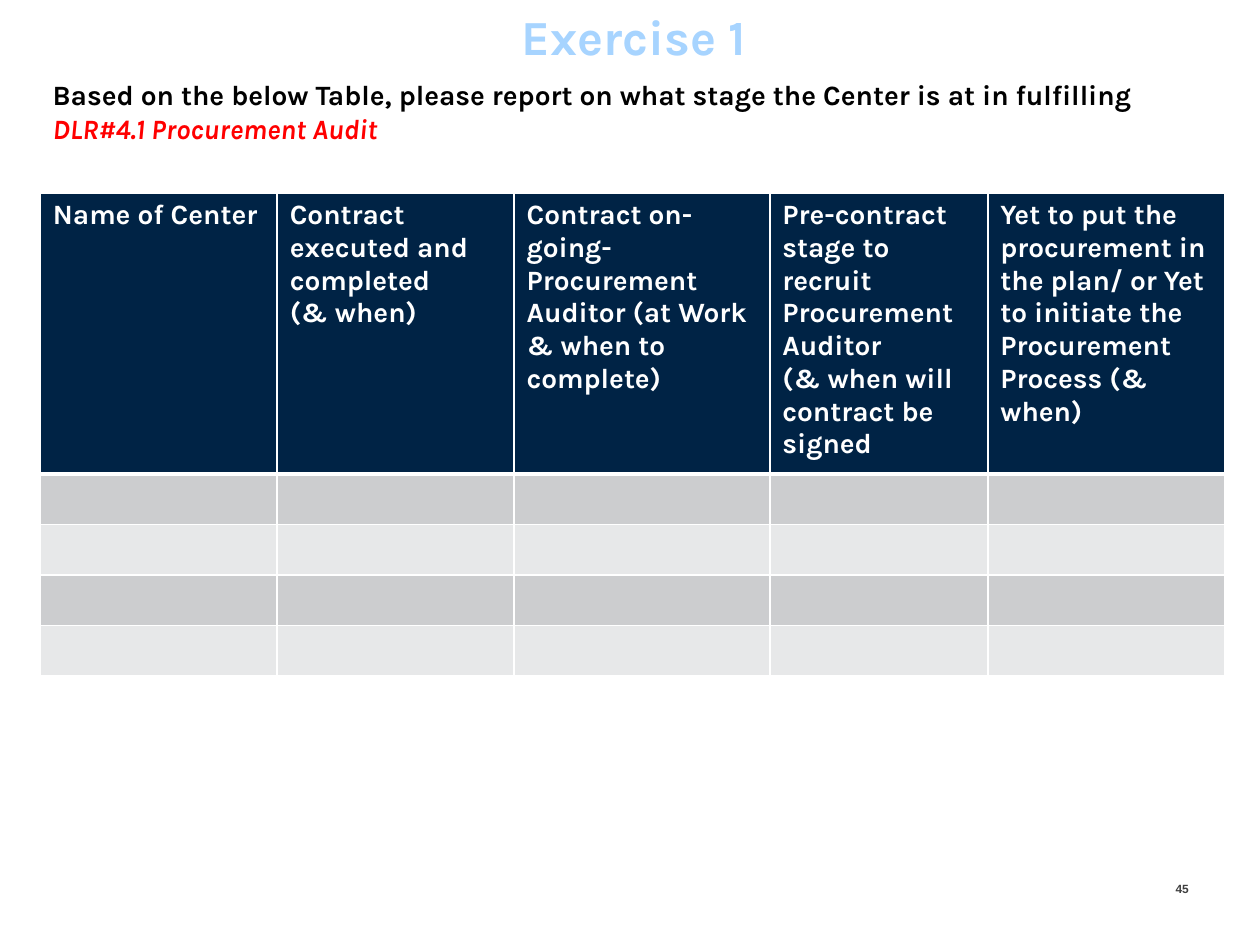
"""Build the Exercise 1 slide with its procurement audit table."""
import lxml.etree
import pptx
import pptx.dml.color
import pptx.enum.text
import pptx.oxml.ns
import pptx.util

Inches = pptx.util.Inches
Pt = pptx.util.Pt

THEME = {
    "font": "Karla", "plain": "Arial",
    "navy": "002345", "sky": "A7D4FF", "black": "000000", "red": "FF0000",
    "white": "FFFFFF", "gray": "404040", "bands": ("CCCDCF", "E7E8E9"),
    "title": 28, "body": 16, "small": 6.8, "thin": 1, "thick": 3,
}
TITLE = [("Exercise 1", "sky", False)]
INTRO = [
    ("Based on the below Table, please report on what stage the Center is at in fulfilling ", "black", False),
    ("DLR#4.1 Procurement Audit", "red", True),
]
NUMBER = [("45", "gray", False)]
HEADS = [
    (1.88, ["Name of Center"]),
    (1.88, ["Contract executed and completed", "(& when)"]),
    (2.03, ["Contract on-going- Procurement Auditor (at Work", "& when to complete)"]),
    (1.73, ["Pre-contract stage to recruit Procurement Auditor", "(& when will contract be signed"]),
    (1.88, ["Yet to put the procurement in the plan/ or Yet to initiate the Procurement Process (& when)"]),
]
ROWS = [2.22] + [0.4] * 4


def tint(name):
    return pptx.dml.color.RGBColor.from_string(name)


def write(para, parts, size, face="font"):
    for text, color, slant in parts:
        run = para.add_run()
        run.text = text
        font = run.font
        font.name, font.size, font.bold = THEME[face], Pt(THEME[size]), True
        if slant:
            font.italic = True
        font.color.rgb = tint(THEME[color])


def label(slide, place, parts, size, face="font", align=None, inset=None):
    box = slide.shapes.add_textbox(*map(Inches, place))
    frame = box.text_frame
    frame.word_wrap = True
    if inset:
        sides = map(Inches, inset)
        frame.margin_left, frame.margin_top, frame.margin_right, frame.margin_bottom = sides
    para = frame.paragraphs[0]
    para.alignment = align
    write(para, parts, size, face)


def border(cell, row):
    props = cell._tc.get_or_add_tcPr()
    name = pptx.oxml.ns.qn
    for side in "LRTB":
        heavy = (row, side) in ((0, "B"), (1, "T"))
        width = Pt(THEME["thick" if heavy else "thin"])
        line = lxml.etree.SubElement(props, name("a:ln" + side), w=str(width))
        fill = lxml.etree.SubElement(line, name("a:solidFill"))
        lxml.etree.SubElement(fill, name("a:srgbClr"), val=THEME["white"])


def grid(slide):
    wide = sum(width for width, _ in HEADS)
    place = (0.32, 1.53, wide, sum(ROWS))
    table = slide.shapes.add_table(len(ROWS), len(HEADS), *map(Inches, place)).table
    for row, tall in enumerate(ROWS):
        table.rows[row].height = Inches(tall)
        for col, (width, lines) in enumerate(HEADS):
            table.columns[col].width = Inches(width)
            cell = table.cell(row, col)
            border(cell, row)
            cell.fill.solid()
            shade = THEME["bands"][(row - 1) % 2] if row else THEME["navy"]
            cell.fill.fore_color.rgb = tint(shade)
            if row == 0:
                frame = cell.text_frame
                for spot, text in enumerate(lines):
                    para = frame.add_paragraph() if spot else frame.paragraphs[0]
                    write(para, [(text, "white", False)], "body")


def main():
    deck = pptx.Presentation()
    deck.slide_width, deck.slide_height = Inches(10), Inches(7.5)
    slide = deck.slides.add_slide(deck.slide_layouts[6])
    label(slide, (9.33, 6.96, 0.31, 0.24), NUMBER, "small", "plain", inset=(0, 0.04, 0, 0))
    label(slide, (0.14, 0, 9.78, 0.57), TITLE, "title", align=pptx.enum.text.PP_ALIGN.CENTER)
    label(slide, (0.32, 0.57, 9.4, 0.64), INTRO, "body")
    grid(slide)
    deck.save("out.pptx")


if __name__ == "__main__":
    main()
